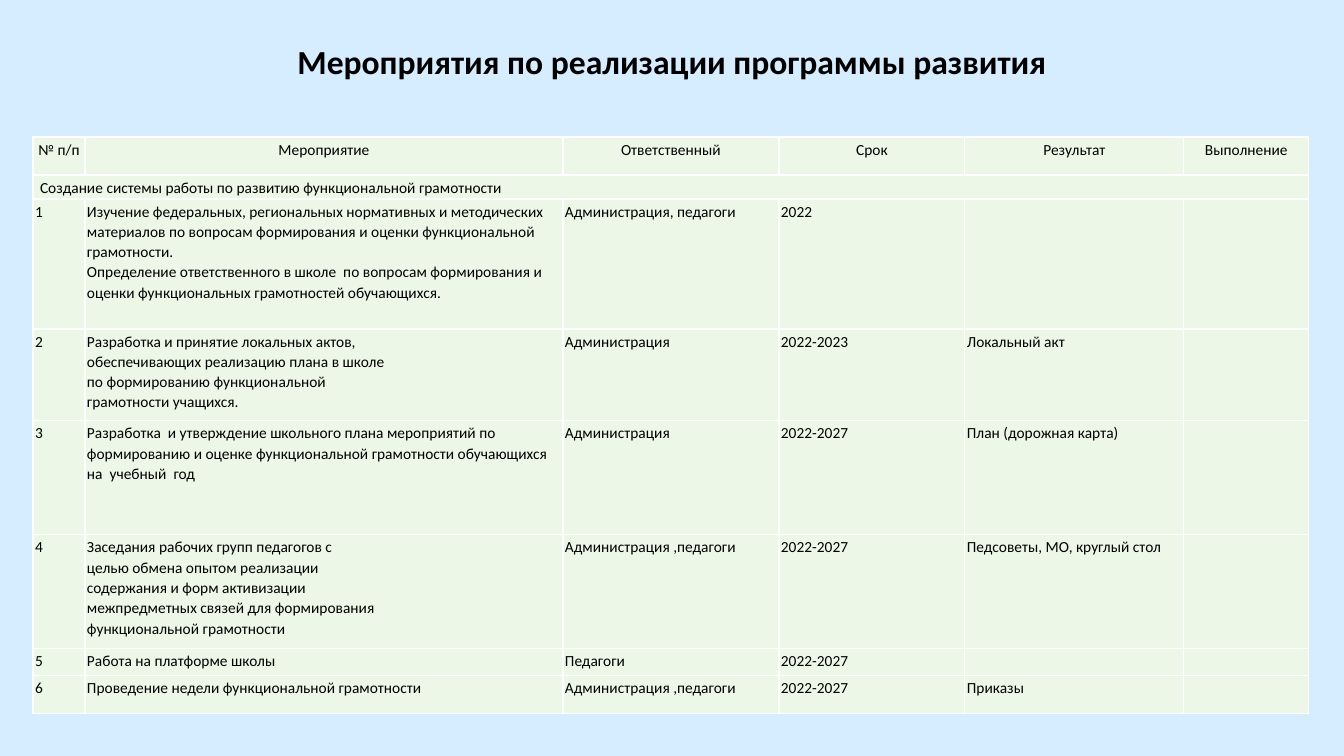
from lxml.etree import SubElement
from pptx import Presentation
from pptx.dml.color import RGBColor
from pptx.enum.text import MSO_ANCHOR as Anchor, PP_ALIGN as Align
from pptx.oxml.ns import qn
from pptx.util import Emu, Pt

COLORS = {"page": "D6ECFF", "cell": "ECF7E8", "border": "FFFFFF", "text": "000000"}
FONT = "Calibri"
BODY_SIZE = 11


def px(count):
    return Emu(round(count * 914400 / 100.8))


def add_span(para, text, size, bold=False):
    span = para.add_run()
    span.text = text
    span.font.name = FONT
    span.font.size = Pt(size)
    span.font.bold = bold
    span.font.color.rgb = RGBColor.from_string(COLORS["text"])


deck = Presentation()
deck.slide_width, deck.slide_height = px(1344), px(756)
page = deck.slides.add_slide(deck.slide_layouts[6])
page.background.fill.solid()
page.background.fill.fore_color.rgb = RGBColor.from_string(COLORS["page"])

# Title, raised by a deeper bottom margin
title = page.shapes.add_textbox(px(67), px(37), px(1210), px(82)).text_frame
title.word_wrap = True
title.vertical_anchor = Anchor.MIDDLE
title.margin_bottom = px(39)
title.paragraphs[0].alignment = Align.CENTER
add_span(title.paragraphs[0], "Мероприятия по реализации программы развития", 24, bold=True)

# Table content: each line break starts a new paragraph
HEADER_ROW, SECTION_ROW, MEETINGS_ROW = 0, 1, 5
rows = [
    ["№ п/п", "Мероприятие", "Ответственный", "Срок", "Результат", "Выполнение"],
    ["Создание системы работы по развитию функциональной грамотности", "", "", "", "", ""],
    ["1",
     "Изучение федеральных, региональных нормативных и методических материалов "
     "по вопросам формирования и оценки функциональной грамотности.\n"
     "Определение ответственного в школе  по вопросам формирования и оценки "
     "функциональных грамотностей обучающихся.",
     "Администрация, педагоги", "2022", "", ""],
    ["2",
     "Разработка и принятие локальных актов,\n"
     "обеспечивающих реализацию плана в школе\n"
     "по формированию функциональной\n"
     "грамотности учащихся.",
     "Администрация", "2022-2023", "Локальный акт", ""],
    ["3",
     "Разработка  и утверждение школьного плана мероприятий по формированию "
     "и оценке функциональной грамотности обучающихся на  учебный  год",
     "Администрация", "2022-2027", "План (дорожная карта)", ""],
    ["4",
     "Заседания рабочих групп педагогов с\n"
     "целью обмена опытом реализации\n"
     "содержания и форм активизации\n"
     "межпредметных связей для формирования\n"
     "функциональной грамотности",
     "Администрация ,педагоги", "2022-2027", "Педсоветы, МО, круглый стол", ""],
    ["5", "Работа на платформе школы", "Педагоги", "2022-2027", "", ""],
    ["6", "Проведение недели функциональной грамотности",
     "Администрация ,педагоги", "2022-2027", "Приказы", ""],
]
column_widths = [52, 478, 216, 186, 219, 125]
row_heights = [38, 24, 130, 92, 114, 114, 27, 38]

# Table frame
table = page.shapes.add_table(len(rows), len(column_widths), px(33), px(137),
                              px(sum(column_widths)), px(sum(row_heights))).table
table.first_row = False
table.horz_banding = False
for column, width in zip(table.columns, column_widths):
    column.width = px(width)
for row, height in zip(table.rows, row_heights):
    row.height = px(height)

# Cells
for row_index, texts in enumerate(rows):
    for column_index, text in enumerate(texts):
        cell = table.cell(row_index, column_index)
        cell.margin_left = cell.margin_right = px(2)
        cell.margin_top = cell.margin_bottom = px(2)

        properties = cell._tc.get_or_add_tcPr()
        for side in ("lnL", "lnR", "lnT", "lnB"):
            line = SubElement(properties, qn(f"a:{side}"), w=str(Pt(1)))
            line_fill = SubElement(line, qn("a:solidFill"))
            SubElement(line_fill, qn("a:srgbClr"), val=COLORS["border"])
        cell.fill.solid()
        cell.fill.fore_color.rgb = RGBColor.from_string(COLORS["cell"])

        frame = cell.text_frame
        for line_index, words in enumerate(text.split("\n")):
            para = frame.add_paragraph() if line_index else frame.paragraphs[0]
            para.line_spacing = 1.07
            if row_index == HEADER_ROW:
                para.alignment = Align.CENTER
            elif row_index == MEETINGS_ROW and column_index == 1:
                para.alignment = Align.JUSTIFY
            if words:
                add_span(para, words, BODY_SIZE)
            else:
                # Keeps empty cells from stretching low rows
                para._p.get_or_add_endParaRPr().set("sz", str(BODY_SIZE * 100))

# Section heading across all columns
section = table.cell(SECTION_ROW, 0)
section.merge(table.cell(SECTION_ROW, len(column_widths) - 1))
section.text_frame.paragraphs[0]._p.get_or_add_pPr().set("marL", str(px(5)))

deck.save("out.pptx")
